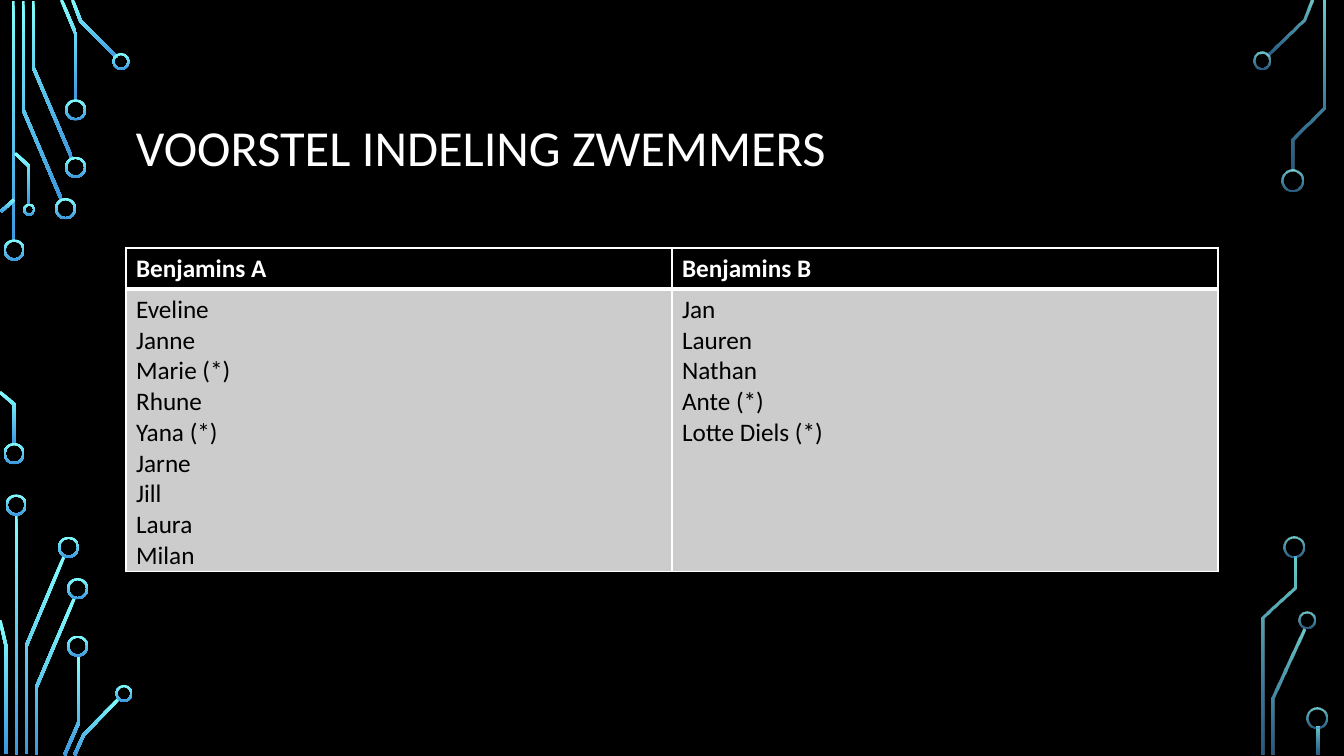
import math

import lxml.etree
import pptx
import pptx.dml.color
import pptx.enum.dml
import pptx.enum.shapes
import pptx.enum.text
import pptx.oxml.ns
import pptx.util

Inches = pptx.util.Inches
Pt = pptx.util.Pt
RGBColor = pptx.dml.color.RGBColor
qn = pptx.oxml.ns.qn

BLACK = RGBColor(0x00, 0x00, 0x00)
WHITE = RGBColor(0xFF, 0xFF, 0xFF)
GREY = RGBColor(0xCC, 0xCC, 0xCC)
AQUA = RGBColor(0x82, 0xFF, 0xFF)
BLUE = RGBColor(0x3D, 0x97, 0xDE)

FONT = "Calibri"
TRACE_WIDTH = 0.03
RING_WIDTH = 0.02

LEFT_TRACES = [
    [(0.13, 0.01), (0.13, 2.4)],
    [(0.23, 0.01), (0.23, 1.09), (0.61, 1.98)],
    [(0.33, 0.01), (0.33, 0.67), (0.71, 1.56)],
    [(0.61, 0), (0.75, 0.33), (0.75, 1)],
    [(0.72, 0), (0.8, 0.21), (1.16, 0.57)],
    [(0.01, 2.1), (0.14, 1.98)],
    [(0, 3.89), (0.14, 4.01), (0.14, 4.41)],
    [(0.15, 1.52), (0.29, 1.65), (0.29, 2.03)],
    [(0.16, 5.1), (0.16, 7.49)],
    [(0.26, 7.48), (0.26, 6.41), (0.64, 5.51)],
    [(0, 6.15), (0.06, 6.41), (0.06, 7.48)],
    [(0.36, 7.49), (0.36, 6.82), (0.74, 5.93)],
    [(0.64, 7.49), (0.78, 7.17), (0.78, 6.5)],
    [(0.74, 7.49), (0.83, 7.29), (1.18, 6.93)],
]
LEFT_RINGS = [
    (0.14, 2.48, 0.21), (0.14, 4.5, 0.21), (0.65, 2.07, 0.21),
    (0.75, 1.66, 0.21), (0.75, 1.09, 0.21), (1.2, 0.61, 0.17),
    (0.29, 2.08, 0.12), (0.16, 5.01, 0.21), (0.68, 5.43, 0.21),
    (0.77, 5.84, 0.21), (0.77, 6.41, 0.21), (1.23, 6.88, 0.17),
]
RIGHT_TRACES = [
    [(0.17, 0.55), (0.53, 0.2), (0.61, 0)],
    [(0.23, 7.49), (0.23, 6.93), (0.53, 6.24)],
    [(0.42, 1.69), (0.42, 1.38), (0.73, 1.07), (0.73, 0.01)],
    [(0.13, 7.49), (0.13, 6.13), (0.44, 5.83), (0.44, 5.52)],
    [(0.67, 7.21), (0.67, 7.49)],
]
RIGHT_RINGS = [
    (0.12, 0.6, 0.17), (0.42, 1.79, 0.21), (0.56, 6.15, 0.17),
    (0.43, 5.43, 0.21), (0.66, 7.12, 0.21),
]

GROUPS = {
    "Benjamins A": ["Eveline", "Janne", "Marie (*)", "Rhune", "Yana (*)",
                    "Jarne", "Jill", "Laura", "Milan"],
    "Benjamins B": ["Jan", "Lauren", "Nathan", "Ante (*)", "Lotte Diels (*)"],
}


def glow(shape, opacities):
    shape.shadow.inherit = False
    shape.line.fill.background()
    shape.fill.gradient()
    shape.fill.gradient_angle = 270
    for stop, color, opacity in zip(shape.fill.gradient_stops, (AQUA, BLUE), opacities):
        stop.color.rgb = color
    tints = shape._element.spPr.iter(qn("a:srgbClr"))
    for tint, opacity in zip(tints, opacities):
        if opacity < 100:
            alpha = lxml.etree.SubElement(tint, qn("a:alpha"))
            alpha.set("val", str(opacity * 1000))


def trace_outline(points):
    normals = []
    for (x1, y1), (x2, y2) in zip(points, points[1:]):
        length = math.hypot(x2 - x1, y2 - y1)
        normals.append(((y1 - y2) / length, (x2 - x1) / length))
    near, far = [], []
    befores, afters = normals[:1] + normals, normals + normals[-1:]
    for (x, y), (ax, ay), (bx, by) in zip(points, befores, afters):
        reach = TRACE_WIDTH / 2 / (1 + ax * bx + ay * by)
        dx, dy = (ax + bx) * reach, (ay + by) * reach
        near.append((x + dx, y + dy))
        far.append((x - dx, y - dy))
    return near + far[::-1]


def add_circuit(slide, left, top, traces, rings, opacities):
    for points in traces:
        outline = [(Inches(left + x), Inches(top + y)) for x, y in trace_outline(points)]
        builder = slide.shapes.build_freeform(*outline[0])
        builder.add_line_segments(outline[1:], close=True)
        glow(builder.convert_to_shape(), opacities)
    for x, y, size in rings:
        ring = slide.shapes.add_shape(
            pptx.enum.shapes.MSO_SHAPE.DONUT,
            Inches(left + x - size / 2), Inches(top + y - size / 2),
            Inches(size), Inches(size))
        ring.adjustments[0] = RING_WIDTH / size
        glow(ring, opacities)


def add_run(paragraph, text, size, color, bold=False):
    run = paragraph.add_run()
    run.text = text
    run.font.name = FONT
    run.font.size = Pt(size)
    run.font.bold = bold
    run.font.color.rgb = color


def add_title(slide, left, top, width, height):
    title = slide.shapes.add_textbox(Inches(left), Inches(top), Inches(width), Inches(height))
    frame = title.text_frame
    frame.word_wrap = True
    frame.vertical_anchor = pptx.enum.text.MSO_ANCHOR.MIDDLE
    frame.paragraphs[0].line_spacing = 0.9
    add_run(frame.paragraphs[0], "VOORSTEL INDELING ZWEMMERS", 36, WHITE)


def set_borders(cell, widths):
    properties = cell._tc.get_or_add_tcPr()
    for side, width in zip("LRTB", widths):
        border = lxml.etree.SubElement(properties, qn("a:ln" + side), w=str(Pt(width)))
        fill = lxml.etree.SubElement(border, qn("a:solidFill"))
        lxml.etree.SubElement(fill, qn("a:srgbClr"), val=str(WHITE))


def fill_cell(cell, lines, fill, color, bold, borders):
    set_borders(cell, borders)
    cell.fill.solid()
    cell.fill.fore_color.rgb = fill
    frame = cell.text_frame
    for index, line in enumerate(lines):
        paragraph = frame.add_paragraph() if index else frame.paragraphs[0]
        add_run(paragraph, line, 18, color, bold)


def add_groups(slide, left, top, width, height):
    header_height = 0.41
    table = slide.shapes.add_table(
        2, len(GROUPS), Inches(left), Inches(top), Inches(width), Inches(height)).table
    table.rows[0].height = Inches(header_height)
    table.rows[1].height = Inches(height - header_height)
    for column, (group, swimmers) in enumerate(GROUPS.items()):
        table.columns[column].width = Inches(width / len(GROUPS))
        fill_cell(table.cell(0, column), [group], BLACK, WHITE, True, (1, 1, 1, 3))
        fill_cell(table.cell(1, column), swimmers, GREY, BLACK, False, (1, 1, 3, 1))


def main():
    deck = pptx.Presentation()
    deck.slide_width = Inches(13.33)
    deck.slide_height = Inches(7.5)
    slide = deck.slides.add_slide(deck.slide_layouts[6])
    slide.background.fill.solid()
    slide.background.fill.fore_color.rgb = BLACK
    add_circuit(slide, 0, 0, LEFT_TRACES, LEFT_RINGS, (100, 100))
    add_circuit(slide, 12.4, 0, RIGHT_TRACES, RIGHT_RINGS, (80, 60))
    add_title(slide, 1.25, 0.68, 10.83, 1.62)
    add_groups(slide, 1.25, 2.46, 10.83, 3.21)
    deck.save("out.pptx")


if __name__ == "__main__":
    main()
